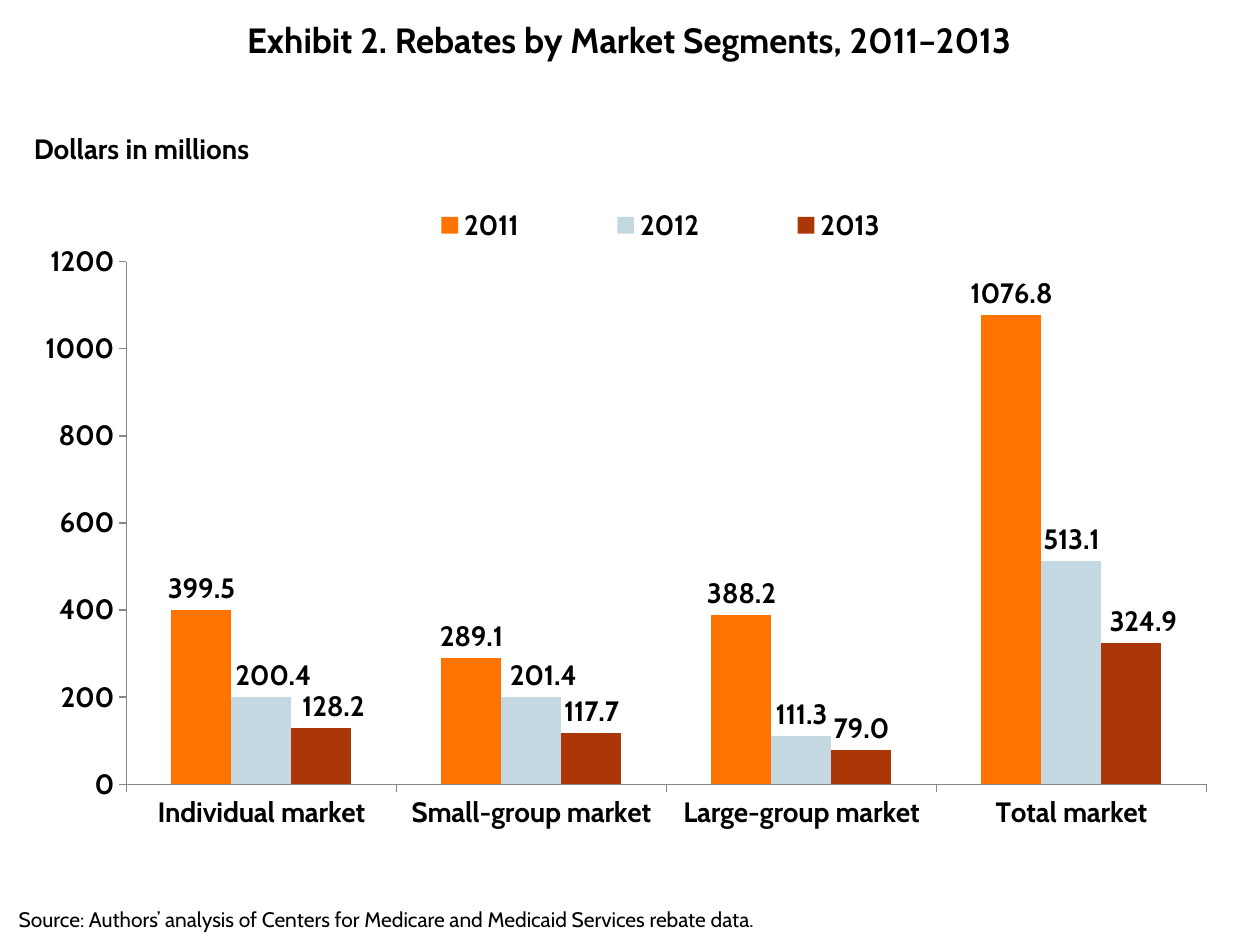
import dataclasses

import lxml.etree
import pptx
import pptx.chart.data
import pptx.dml.color
import pptx.enum.chart
import pptx.enum.text
import pptx.oxml.ns
import pptx.util


@dataclasses.dataclass(frozen=True)
class Theme:
    font: str = "Cabin"
    ink: str = "000000"
    axis: str = "868686"
    title: int = 20
    body: int = 16
    source: int = 12


THEME = Theme()
WIDTH, HEIGHT = pptx.util.Inches(10), pptx.util.Inches(7.5)
MARKETS = ["Individual market", "Small-group market", "Large-group market", "Total market"]
REBATES = {
    "2011": ("FF7300", [399.5, 289.1, 388.2, 1076.8]),
    "2012": ("C4D8E2", [200.4, 201.4, 111.3, 513.1]),
    "2013": ("AB3608", [128.2, 117.7, 79.0, 324.9]),
}
SHIFTED_LABELS = {"2012": (0, 1), "2013": (0, 3)}
LABEL_SHIFT = 0.01


def frame(left, top, width, height):
    return [int(share * side) for share, side in
            zip((left, top, width, height), (WIDTH, HEIGHT, WIDTH, HEIGHT))]


def rgb(color):
    return pptx.dml.color.RGBColor.from_string(color)


def style_font(font, size, bold=True):
    font.name = THEME.font
    font.size = pptx.util.Pt(size)
    font.bold = bold
    font.color.rgb = rgb(THEME.ink)


def add_caption(slide, wording, place, size, bold=True, align=pptx.enum.text.PP_ALIGN.LEFT):
    caption = slide.shapes.add_textbox(*frame(*place)).text_frame
    caption.word_wrap = False
    caption.auto_size = pptx.enum.text.MSO_AUTO_SIZE.SHAPE_TO_FIT_TEXT
    caption.text = wording
    line = caption.paragraphs[0]
    line.alignment = align
    style_font(line.runs[0].font, size, bold)


def set_layout(part, position, **settings):
    qn = pptx.oxml.ns.qn
    for previous in part.findall(qn("c:layout")):
        part.remove(previous)
    layout = lxml.etree.SubElement(part, qn("c:layout"))
    part.insert(position, layout)
    manual = lxml.etree.SubElement(layout, qn("c:manualLayout"))
    for name, setting in settings.items():
        lxml.etree.SubElement(manual, qn("c:" + name)).set("val", str(setting))


def style_axis(axis):
    axis.has_major_gridlines = False
    axis.major_tick_mark = pptx.enum.chart.XL_TICK_MARK.OUTSIDE
    axis.format.line.color.rgb = rgb(THEME.axis)
    axis.format.line.width = pptx.util.Pt(0.75)
    style_font(axis.tick_labels.font, THEME.body)


def style_series(series):
    series.format.fill.solid()
    series.format.fill.fore_color.rgb = rgb(REBATES[series.name][0])
    above = pptx.enum.chart.XL_LABEL_POSITION.OUTSIDE_END
    labels = series.data_labels
    labels.show_value = True
    labels.number_format = "0.0"
    labels.number_format_is_linked = False
    labels.position = above
    style_font(labels.font, THEME.body)
    for index in SHIFTED_LABELS.get(series.name, ()):
        label = series.points[index].data_label
        style_font(label.font, THEME.body)
        label.position = above
    for label in series._element.xpath("c:dLbls/c:dLbl"):
        set_layout(label, 1, x=LABEL_SHIFT, y=0)


def add_rebate_chart(slide, place):
    rebates = pptx.chart.data.CategoryChartData(number_format="0.0")
    rebates.categories = MARKETS
    for year, (_, amounts) in REBATES.items():
        rebates.add_series(year, amounts)
    chart = slide.shapes.add_chart(
        pptx.enum.chart.XL_CHART_TYPE.COLUMN_CLUSTERED, *frame(*place), rebates).chart
    chart.has_title = False
    style_font(chart.font, THEME.body)

    style_axis(chart.category_axis)
    dollars = chart.value_axis
    style_axis(dollars)
    dollars.minimum_scale, dollars.maximum_scale, dollars.major_unit = 0, 1200, 200
    dollars.tick_labels.number_format = "0"
    dollars.tick_labels.number_format_is_linked = False

    columns = chart.plots[0]
    columns.gap_width, columns.overlap = 150, 0
    columns.vary_by_categories = False
    for series in columns.series:
        style_series(series)

    chart.has_legend = True
    years = chart.legend
    years.position = pptx.enum.chart.XL_LEGEND_POSITION.RIGHT
    years.include_in_layout = False
    style_font(years.font, THEME.body)
    set_layout(years._element, 1, xMode="edge", yMode="edge", x=0.27, y=0.01, w=0.52, h=0.09)
    set_layout(chart._chartSpace.chart.plotArea, 0, layoutTarget="inner",
               xMode="edge", yMode="edge", x=0.08, y=0.11, w=0.91, h=0.79)


def main():
    deck = pptx.Presentation()
    deck.slide_width, deck.slide_height = WIDTH, HEIGHT
    slide = deck.slides.add_slide(deck.slide_layouts[6])
    add_rebate_chart(slide, (0.025, 0.2, 0.942, 0.7))
    add_caption(slide, "Exhibit 2. Rebates by Market Segments, 2011–2013",
                (0.184, 0.013, 0.631, 0.058), THEME.title,
                align=pptx.enum.text.PP_ALIGN.CENTER)
    add_caption(slide, "Source: Authors’ analysis of Centers for Medicare and Medicaid "
                "Services rebate data.", (0.005, 0.953, 0.611, 0.04), THEME.source, bold=False)
    add_caption(slide, "Dollars in millions", (0.017, 0.133, 0.194, 0.049), THEME.body)
    deck.save("out.pptx")


if __name__ == "__main__":
    main()
